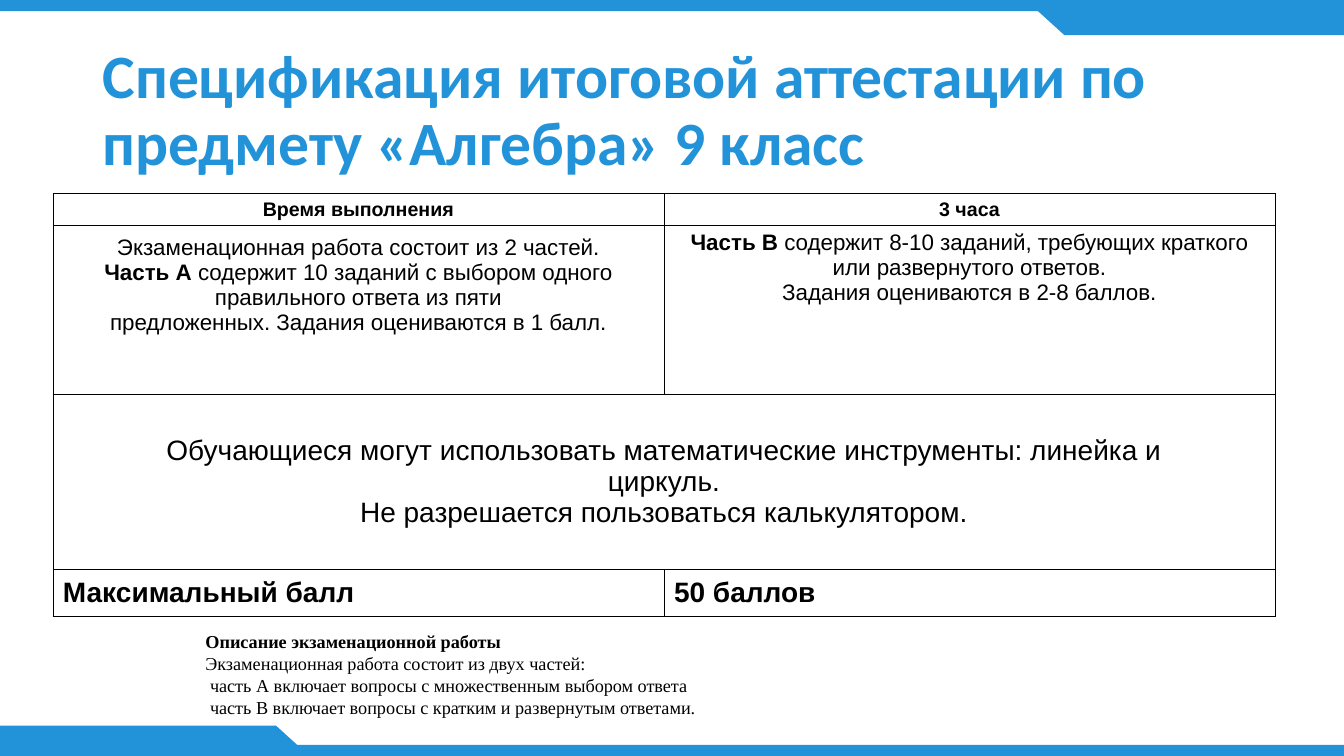
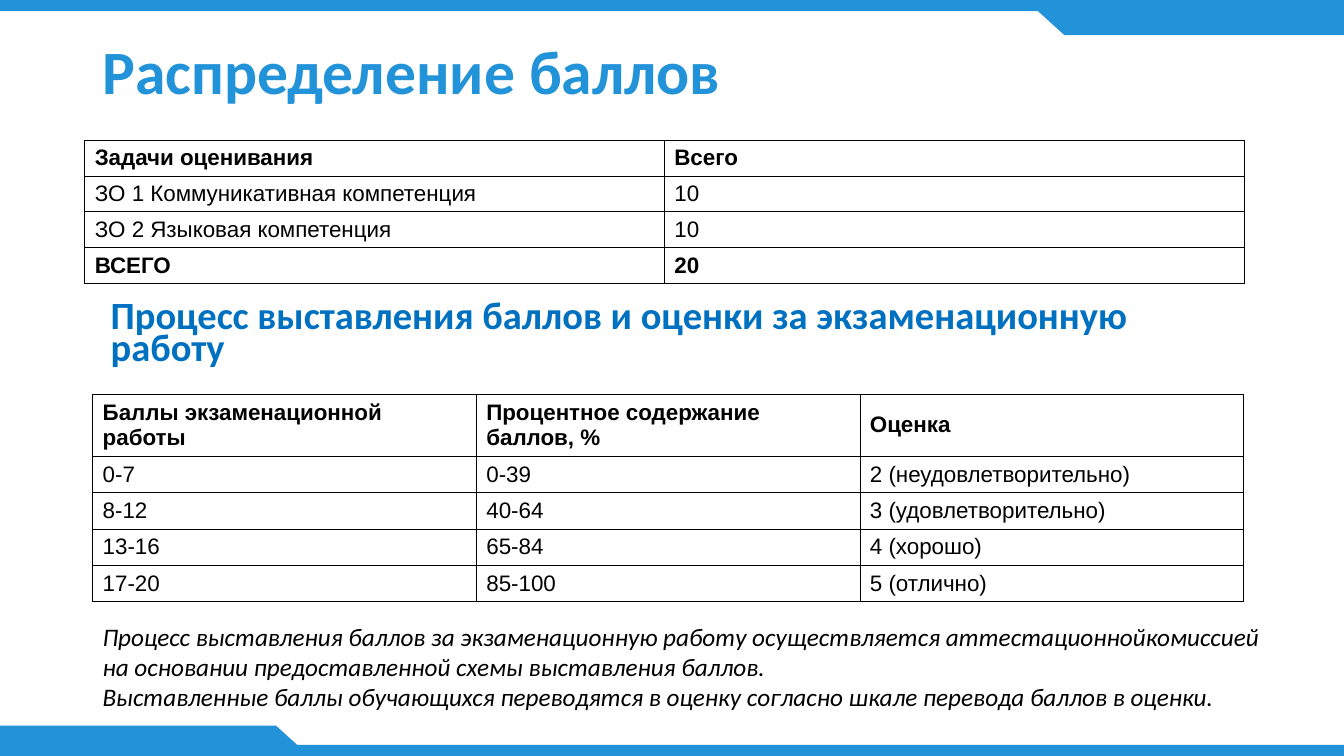
from lxml.etree import SubElement
from pptx import Presentation
from pptx.dml.color import RGBColor
from pptx.enum.shapes import MSO_SHAPE
from pptx.enum.text import MSO_ANCHOR, PP_ALIGN
from pptx.oxml.ns import qn
from pptx.util import Pt

SKY = RGBColor(0x23, 0x93, 0xD9)
BLUE = RGBColor(0x00, 0x70, 0xC0)
BLACK = RGBColor(0, 0, 0)
WIDE, HIGH = 960, 540
BAND, TAB, SLANT = 8, 21.6, 47.5
EDGE = 66.2


def write(frame, lines, size, face, color=BLACK, bold=False, italic=False,
          align=PP_ALIGN.LEFT, space=None):
    """Fill a frame, one paragraph per line; *stars* enclose bold words."""
    frame.word_wrap = True
    for i, line in enumerate(lines):
        para = frame.paragraphs[0] if i == 0 else frame.add_paragraph()
        para.alignment = align
        if space:
            para.line_spacing = space
        font = para.font
        font.size, font.name = Pt(size), face
        font.bold, font.italic = bold, italic
        font.color.rgb = color
        for j, part in enumerate(line.split("*")):
            if part:
                run = para.add_run()
                run.text = part
                if j % 2:
                    run.font.bold = True


def label(slide, box, lines, size, face, **style):
    shape = slide.shapes.add_textbox(*map(Pt, box))
    write(shape.text_frame, lines, size, face, **style)
    return shape.text_frame


def block(slide, kind, *box):
    shape = slide.shapes.add_shape(kind, *map(Pt, box))
    shape.shadow.inherit = False
    shape.fill.solid()
    shape.fill.fore_color.rgb = SKY
    shape.line.fill.background()
    return shape


def bands(slide):
    """Edge strips, each with a slanted tab in one corner."""
    rect, wedge = MSO_SHAPE.RECTANGLE, MSO_SHAPE.FLOWCHART_MERGE
    low = HIGH - TAB
    block(slide, rect, 0, 0, WIDE, BAND)
    block(slide, rect, 0, HIGH - BAND, WIDE, BAND)
    block(slide, rect, 760, 3.6, WIDE - 760, TAB)
    block(slide, wedge, 736, 3, SLANT, TAB)
    block(slide, rect, 0, low, 197.3, TAB)
    block(slide, wedge, 173.5, low, SLANT, TAB).rotation = 180


def title(slide, top, text):
    label(slide, (EDGE, top, 828, 104), [text], 44, "Calibri",
          color=SKY, bold=True, space=0.9)


def frame_cell(cell):
    """Thin black borders and no fill."""
    props = cell._tc.get_or_add_tcPr()
    for side in ("lnL", "lnR", "lnT", "lnB"):
        line = SubElement(props, qn("a:" + side), w=str(Pt(0.5)))
        fill = SubElement(line, qn("a:solidFill"))
        SubElement(fill, qn("a:srgbClr"), val=str(BLACK))
    cell.fill.background()


def grid(slide, left, top, width, highs, rows, size=16, bold_rows=(),
         align=PP_ALIGN.LEFT):
    """Table with equal columns; a line break in a cell starts a paragraph."""
    cols = len(rows[0])
    table = slide.shapes.add_table(
        len(rows), cols, *map(Pt, (left, top, width, sum(highs)))).table
    table.first_row = table.horz_banding = False
    for col in table.columns:
        col.width = Pt(width / cols)
    for r, (high, row) in enumerate(zip(highs, rows)):
        table.rows[r].height = Pt(high)
        for c, text in enumerate(row):
            cell = table.cell(r, c)
            frame_cell(cell)
            cell.margin_top = cell.margin_bottom = Pt(3)
            cell.vertical_anchor = MSO_ANCHOR.MIDDLE
            write(cell.text_frame, text.split("\n"), size, "Arial",
                  bold=r in bold_rows, align=align)
    return table


def exam(slide):
    left, width = 37.8, 873
    title(slide, 29, "Спецификация итоговой аттестации по предмету "
                     "«Алгебра» 9 класс")
    parts = grid(slide, left, 138.2, width, (22.5, 120.8), [
        ("Время выполнения", "3 часа"),
        ("Экзаменационная работа состоит из 2 частей.\n"
         "*Часть А* содержит 10 заданий с выбором одного "
         "правильного ответа из пяти\n"
         "предложенных. Задания оцениваются в 1 балл.",
         "*Часть В* содержит 8-10 заданий, требующих краткого "
         "или развернутого ответов.\n"
         "Задания оцениваются в 2-8 баллов."),
    ], bold_rows=(0,), align=PP_ALIGN.CENTER)
    for cell in parts.rows[0].cells:
        cell.text_frame.paragraphs[0].font.size = Pt(14)
    for cell, gap in zip(parts.rows[1].cells, (7.2, 3.6)):
        cell.vertical_anchor = MSO_ANCHOR.TOP
        cell.margin_top = Pt(gap)

    tools = grid(slide, left, 281.5, width, (125.3, 33.6), [
        ("Обучающиеся могут использовать математические инструменты: "
         "линейка и\nциркуль.\n"
         "Не разрешается пользоваться калькулятором.", ""),
        ("Максимальный балл", "50 баллов"),
    ], size=20, bold_rows=(1,))
    wide = tools.cell(0, 0)
    wide.merge(tools.cell(0, 1))
    for para in wide.text_frame.paragraphs:
        para.alignment = PP_ALIGN.CENTER

    about = label(slide, (139.7, 446.8, 731.5, 70), [
        "*Описание экзаменационной работы*",
        "Экзаменационная работа состоит из двух частей:",
        "часть А включает вопросы с множественным выбором ответа",
        "часть В включает вопросы с кратким и развернутым ответами.",
    ], 13, "Times New Roman")
    for para in about.paragraphs[2:]:
        para._p.get_or_add_pPr().set("marL", str(Pt(3.25)))


def scores(slide):
    title(slide, 26, "Распределение баллов")
    grid(slide, 60.5, 100.1, 828, [25.6] * 4, [
        ("Задачи оценивания", "Всего"),
        ("ЗO 1 Коммуникативная компетенция", "10"),
        ("ЗO 2 Языковая компетенция", "10"),
        ("ВСЕГО", "20"),
    ], bold_rows=(0, 3))
    label(slide, (72, 213, 828, 60),
          ["Процесс выставления баллов и оценки за экзаменационную работу"],
          27.5, "Calibri", color=BLUE, bold=True, space=0.7)
    grid(slide, EDGE, 281.5, 822, [43.2] + [26] * 4, [
        ("Баллы экзаменационной\nработы",
         "Процентное содержание\nбаллов, %", "Оценка"),
        ("0-7", "0-39", "2 (неудовлетворительно)"),
        ("8-12", "40-64", "3 (удовлетворительно)"),
        ("13-16", "65-84", "4 (хорошо)"),
        ("17-20", "85-100", "5 (отлично)"),
    ], bold_rows=(0,))
    label(slide, (EDGE, 440, 856, 74), [
        "Процесс выставления баллов за экзаменационную работу "
        "осуществляется аттестационнойкомиссией на основании "
        "предоставленной схемы выставления баллов.",
        "Выставленные баллы обучающихся переводятся в оценку "
        "согласно шкале перевода баллов в оценки.",
    ], 18, "Calibri", italic=True)


def main():
    deck = Presentation()
    deck.slide_width, deck.slide_height = Pt(WIDE), Pt(HIGH)
    for fill in (exam, scores):
        slide = deck.slides.add_slide(deck.slide_layouts[6])
        bands(slide)
        fill(slide)
    deck.save("out.pptx")


if __name__ == "__main__":
    main()
